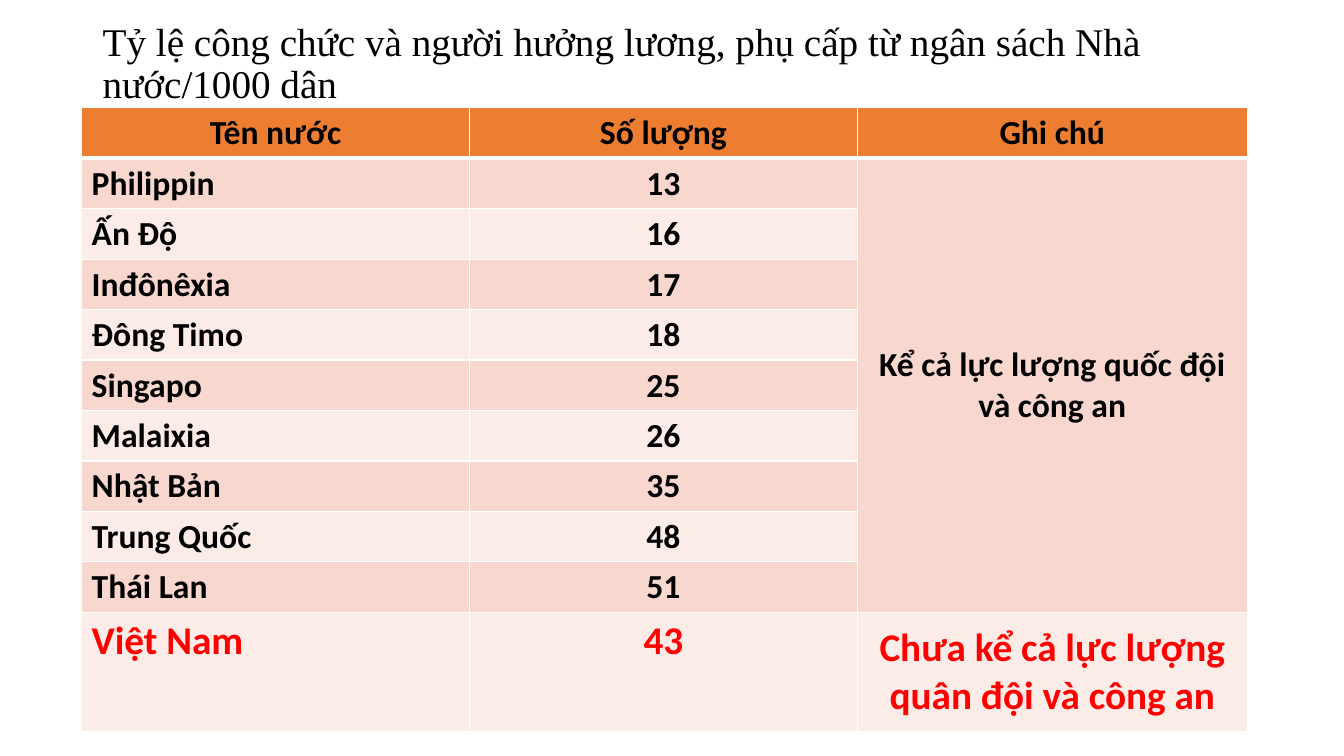
from dataclasses import dataclass

from lxml import etree
from pptx import Presentation
from pptx import util as u
from pptx.dml.color import RGBColor
from pptx.enum import text
from pptx.oxml.ns import qn


@dataclass(frozen=True)
class Theme:
    title_font: str = "Times New Roman"
    body_font: str = "Calibri"
    body_size: int = 24
    large_size: int = 28
    ink: str = "000000"
    accent: str = "FF0000"
    header: str = "ED7D31"
    bands: tuple = ("F8D7CE", "FCECE8")
    rule: str = "FFFFFF"


THEME = Theme()
MIDDLE, TOP = text.MSO_ANCHOR.MIDDLE, text.MSO_ANCHOR.TOP
LEFT, CENTER = text.PP_ALIGN.LEFT, text.PP_ALIGN.CENTER

TITLE = "Tỷ lệ công chức và người hưởng lương, phụ cấp từ ngân sách Nhà nước/1000 dân"
HEADERS = ("Tên nước", "Số lượng", "Ghi chú")
COUNTRIES = (
    ("Philippin", 13), ("Ấn Độ", 16), ("Inđônêxia", 17),
    ("Đông Timo", 18), ("Singapo", 25), ("Malaixia", 26),
    ("Nhật Bản", 35), ("Trung Quốc", 48), ("Thái Lan", 51),
)
SHARED_NOTE = "Kể cả lực lượng quốc đội và công an"
VIETNAM = ("Việt Nam", 43, "Chưa kể cả lực lượng quân đội và công an")

COLUMN_WIDTHS = (3.85, 3.85, 3.87)
ROW_HEIGHT, LAST_ROW_HEIGHT = 0.46, 1.18


def write(frame, words, font=THEME.body_font, size=THEME.body_size,
          color=THEME.ink, bold=True, align=LEFT, spacing=None):
    paragraph = frame.paragraphs[0]
    paragraph.alignment = align
    paragraph.line_spacing = spacing
    run = paragraph.add_run()
    run.text = str(words)
    run.font.name, run.font.size, run.font.bold = font, u.Pt(size), bold
    run.font.color.rgb = RGBColor.from_string(color)


def style_cell(cell, fill, bottom=1):
    properties = cell._tc.get_or_add_tcPr()
    for side, width in (("L", 1), ("R", 1), ("T", 1), ("B", bottom)):
        line = etree.SubElement(properties, qn(f"a:ln{side}"), w=str(u.Pt(width)))
        solid = etree.SubElement(line, qn("a:solidFill"))
        etree.SubElement(solid, qn("a:srgbClr"), val=THEME.rule)
    cell.fill.solid()
    cell.fill.fore_color.rgb = RGBColor.from_string(fill)


def add_title(slide, left, top, width, height):
    frame = slide.shapes.add_textbox(left, top, width, height).text_frame
    frame.word_wrap = True
    frame.vertical_anchor = MIDDLE
    write(frame, TITLE, font=THEME.title_font, size=THEME.large_size,
          bold=False, spacing=0.9)


def add_country_table(slide, left, top, width, height):
    rows = [HEADERS, *((*country, "") for country in COUNTRIES), VIETNAM]
    last = len(rows) - 1
    table = slide.shapes.add_table(
        len(rows), len(HEADERS), left, top, width, height).table

    # Grid, as shares of the box
    for column, share in zip(table.columns, COLUMN_WIDTHS):
        column.width = int(width * share / sum(COLUMN_WIDTHS))
    total = ROW_HEIGHT * last + LAST_ROW_HEIGHT
    for index, row in enumerate(table.rows):
        share = LAST_ROW_HEIGHT if index == last else ROW_HEIGHT
        row.height = int(height * share / total)

    # One note covers every country above the last row
    table.cell(1, 2).merge(table.cell(last - 1, 2))
    rows[1] = (*COUNTRIES[0], SHARED_NOTE)

    # Cells
    for r, values in enumerate(rows):
        for c, value in enumerate(values):
            cell = table.cell(r, c)
            band = 0 if c == 2 and r < last else (r - 1) % 2
            style_cell(cell, THEME.bands[band] if r else THEME.header,
                       bottom=1 if r else 3)
            if cell.is_spanned:
                continue
            cell.vertical_anchor = MIDDLE if r == 0 or c == 2 else TOP
            write(cell.text_frame, value,
                  size=THEME.large_size if r == last else THEME.body_size,
                  color=THEME.accent if r == last else THEME.ink,
                  align=LEFT if c == 0 and r else CENTER)


def main():
    presentation = Presentation()
    presentation.slide_width = u.Inches(13.33)
    presentation.slide_height = u.Inches(7.5)
    slide = presentation.slides.add_slide(presentation.slide_layouts[6])
    add_title(slide, *map(u.Inches, (0.92, 0.25, 11.5, 0.78)))
    add_country_table(slide, *map(u.Inches, (0.81, 1.07, 11.56, 5.78)))
    presentation.save("out.pptx")


if __name__ == "__main__":
    main()
